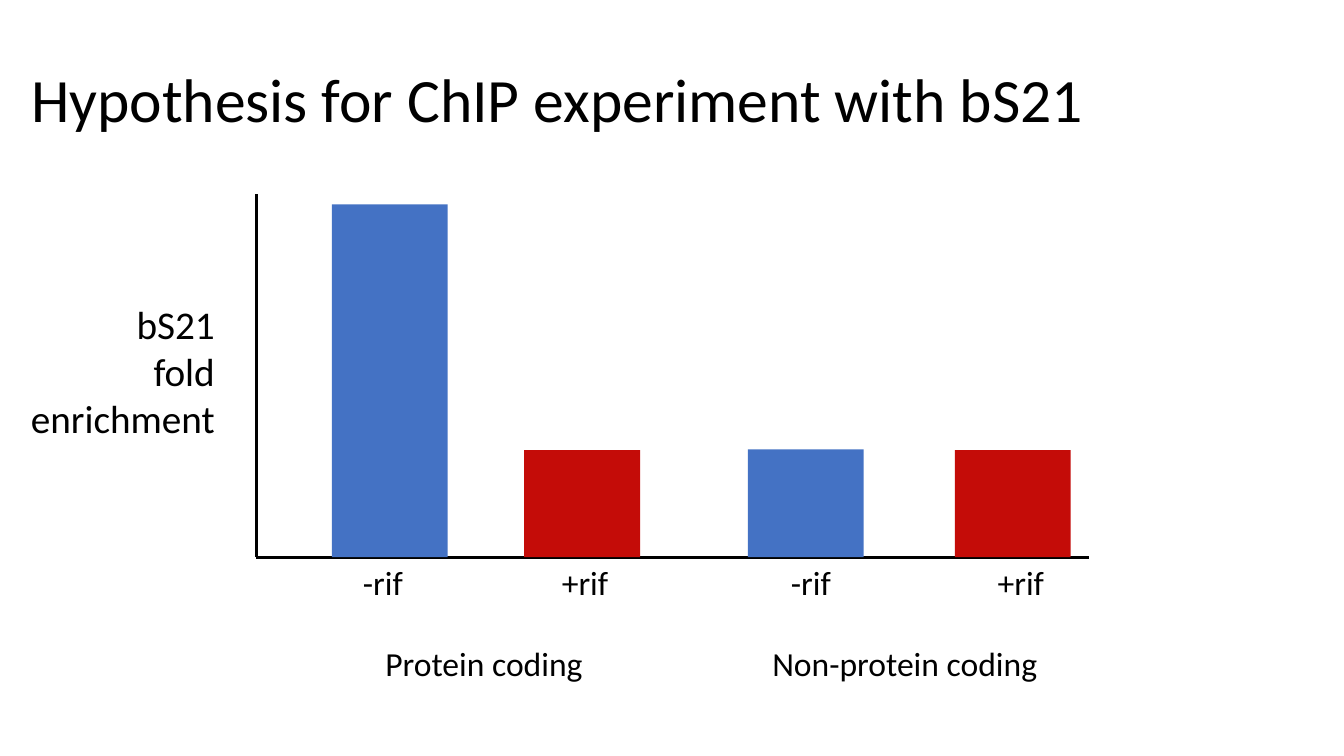
from lxml import etree
from pptx import Presentation
from pptx.dml.color import RGBColor
from pptx.enum.shapes import MSO_CONNECTOR, MSO_SHAPE
from pptx.enum.text import MSO_ANCHOR, PP_ALIGN
from pptx.oxml.ns import qn
from pptx.util import Pt

LINE = MSO_CONNECTOR.STRAIGHT
RECT = MSO_SHAPE.RECTANGLE
MID = MSO_ANCHOR.MIDDLE
LEFT, RIGHT = PP_ALIGN.LEFT, PP_ALIGN.RIGHT

COLORS = {"ink": "000000", "minus": "4472C4", "plus": "C40C08"}
FONT = "Calibri"
BASE = 398
AXIS = 183
WIDE = 82.8
INSET = 7.2
BARS = [
    (237, 252, "minus"),
    (374.4, 76.5, "plus"),
    (534.2, 77, "minus"),
    (682, 76.5, "plus"),
]
# Label text with the centre of each label on the slide
ROWS = [
    [("-rif", 273.6), ("+rif", 418), ("-rif", 579.3), ("+rif", 729.3)],
    [("Protein coding", 345.8), ("Non-protein coding", 646.4)],
]


def color(name):
    return RGBColor.from_string(COLORS[name])


def style(para, size):
    for run in para.runs:
        run.font.name = FONT
        run.font.size = Pt(size)
        run.font.color.rgb = color("ink")


def add_title(slide, text):
    title = slide.shapes.title
    title.left, title.top = Pt(15), Pt(8)
    title.width, title.height = Pt(848), Pt(130)
    frame = title.text_frame
    frame.text = text
    frame.vertical_anchor = MID
    para = frame.paragraphs[0]
    para.alignment = LEFT
    para.line_spacing = 0.9
    style(para, 44)


def add_axis(slide, x, y):
    """Draw an axis from the chart corner to the given end."""
    axis = slide.shapes.add_connector(LINE, Pt(AXIS), Pt(BASE), Pt(x), Pt(y))
    axis.line.color.rgb = color("ink")
    axis.line.width = Pt(2.25)
    etree.SubElement(axis._element.spPr, qn("a:effectLst"))


def add_bar(slide, left, high, name):
    bar = slide.shapes.add_shape(
        RECT, Pt(left), Pt(BASE - high), Pt(WIDE), Pt(high))
    bar.shadow.inherit = False
    bar.fill.solid()
    bar.fill.fore_color.rgb = color(name)
    bar.line.fill.background()


def add_box(slide, left, top, width, high, lines):
    box = slide.shapes.add_textbox(Pt(left), Pt(top), Pt(width), Pt(high))
    frame = box.text_frame
    frame.word_wrap = True
    frame.text = "\n".join(lines)
    return frame.paragraphs


def add_tabs(para, stops):
    tabs = etree.SubElement(para._p.get_or_add_pPr(), qn("a:tabLst"))
    for stop in stops:
        etree.SubElement(tabs, qn("a:tab"), pos=str(Pt(stop)), algn="ctr")


def add_labels(slide, left):
    lines = ["".join("\t" + text for text, _ in row) for row in ROWS]
    paras = add_box(slide, left, BASE, 641, 94, lines)
    for para, row in zip(paras, ROWS):
        add_tabs(para, [mid - left - INSET for _, mid in row])
        style(para, 24)
    paras[1].space_before = Pt(29)


def add_scale(slide):
    """Name the vertical axis."""
    for para in add_box(slide, 10, 211, 150.5, 109, ["bS21", "fold enrichment"]):
        para.alignment = RIGHT
        style(para, 28)


def main():
    deck = Presentation()
    deck.slide_width, deck.slide_height = Pt(960), Pt(540)
    slide = deck.slides.add_slide(deck.slide_layouts[5])
    add_title(slide, "Hypothesis for ChIP experiment with bS21")
    add_axis(slide, 777.6, BASE)
    add_axis(slide, AXIS, 138.5)
    for bar in BARS:
        add_bar(slide, *bar)
    add_labels(slide, 192)
    add_scale(slide)
    deck.save("out.pptx")


if __name__ == "__main__":
    main()
